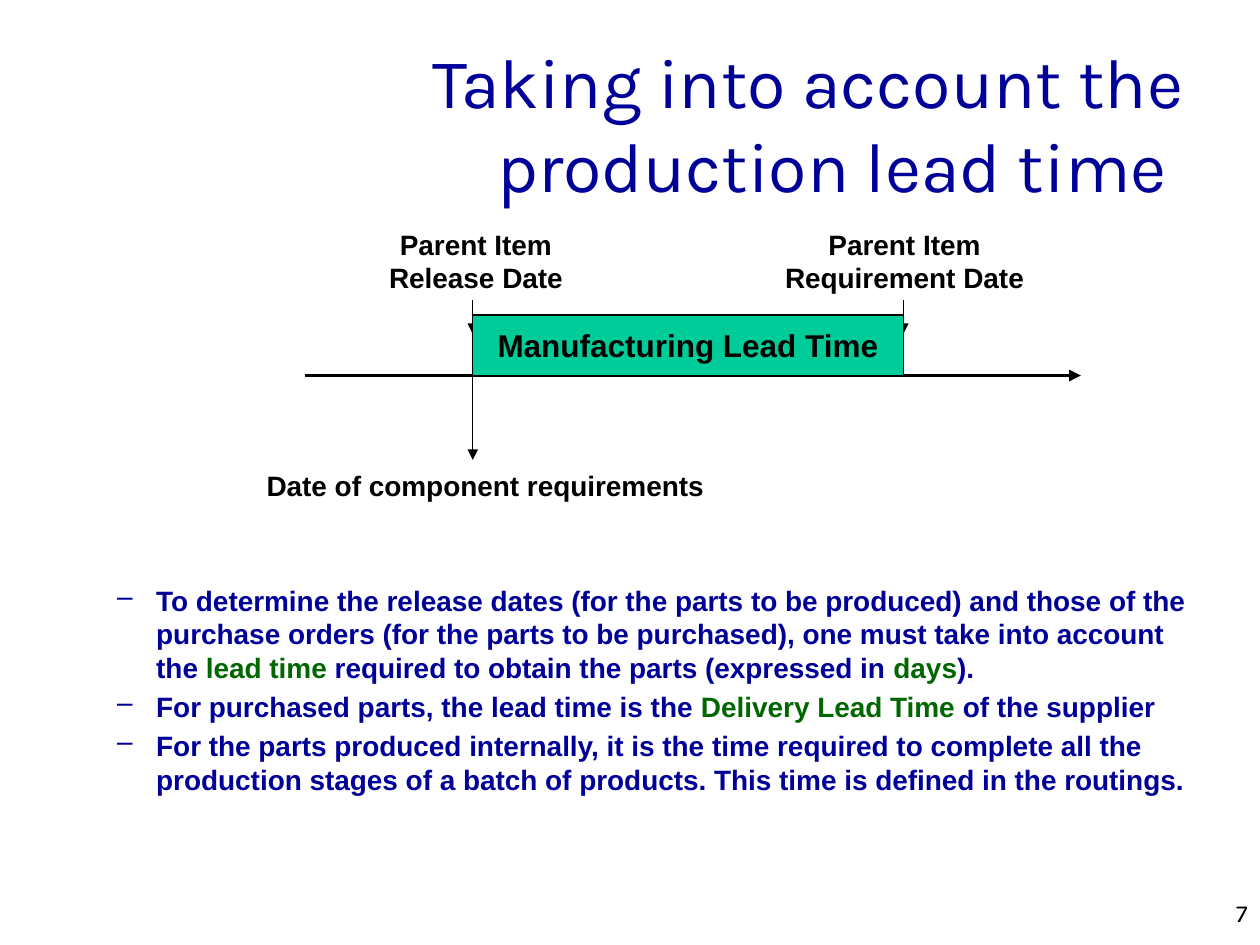
"""Builds a slide on taking the production lead time into account."""
from lxml import etree
from pptx import Presentation
from pptx.dml.color import RGBColor
from pptx.enum.shapes import MSO_CONNECTOR, MSO_SHAPE
from pptx.enum.text import MSO_ANCHOR, PP_ALIGN
from pptx.oxml.ns import qn
from pptx.util import Cm, Pt

STRAIGHT = MSO_CONNECTOR.STRAIGHT
RECTANGLE = MSO_SHAPE.RECTANGLE
TOP, MIDDLE = MSO_ANCHOR.TOP, MSO_ANCHOR.MIDDLE
LEFT, CENTER, RIGHT = PP_ALIGN.LEFT, PP_ALIGN.CENTER, PP_ALIGN.RIGHT
COLORS = {"black": "000000", "blue": "000099", "green": "006600", "teal": "00CC99"}

RELEASE_X, REQUIREMENT_X = 9.53, 18.21
AXIS_Y, BAR_TOP = 7.57, 6.35


def write_text(shape, paragraphs, size, font, align, anchor=TOP, wrap=True, bold=False):
    frame = shape.text_frame
    frame.word_wrap = wrap
    frame.vertical_anchor = anchor
    for index, runs in enumerate(paragraphs):
        paragraph = frame.add_paragraph() if index else frame.paragraphs[0]
        paragraph.alignment = align
        for text, color in runs:
            run = paragraph.add_run()
            run.text = text
            run.font.size = Pt(size)
            run.font.name = font
            run.font.bold = bold
            run.font.color.rgb = RGBColor.from_string(COLORS[color])


def add_arrow(slide, x1, y1, x2, y2, width):
    arrow = slide.shapes.add_connector(STRAIGHT, Cm(x1), Cm(y1), Cm(x2), Cm(y2))
    arrow.line.color.rgb = RGBColor.from_string(COLORS["black"])
    arrow.line.width = Pt(width)
    etree.SubElement(arrow.line._get_or_add_ln(), qn("a:tailEnd"), type="triangle")
    etree.SubElement(arrow._element.spPr, qn("a:effectLst"))


presentation = Presentation()
presentation.slide_width = Cm(25.4)
presentation.slide_height = Cm(19.05)
slide = presentation.slides.add_slide(presentation.slide_layouts[6])

page_number = slide.shapes.add_textbox(Cm(20.12), Cm(17.98), Cm(5.28), Cm(0.64))
write_text(page_number, [[("7", "black")]], 14, "Karla", RIGHT)

title = slide.shapes.add_textbox(Cm(3.81), Cm(1.32), Cm(20.29), Cm(2.29))
title_text = "Taking into account the production lead time "
write_text(title, [[(title_text, "blue")]], 40, "Karla", RIGHT, MIDDLE)

points = [
    [
        ("To determine the release dates (for the parts to be produced) and those of the "
         "purchase orders (for the parts to be purchased), one must take into account the ", "blue"),
        ("lead time", "green"),
        (" required to obtain the parts (expressed in ", "blue"),
        ("days", "green"),
        (").", "blue"),
    ],
    [
        ("For purchased parts, the lead time is the ", "blue"),
        ("Delivery Lead Time", "green"),
        (" of the supplier", "blue"),
    ],
    [
        ("For the parts produced internally, it is the time required to complete all the "
         "production stages of a batch of products. This time is defined in the routings.", "blue"),
    ],
]
body = slide.shapes.add_textbox(Cm(0.84), Cm(11.63), Cm(23.7), Cm(5.72))
write_text(body, points, 16, "Arial", LEFT, bold=True)
for paragraph in body.text_frame.paragraphs:
    paragraph.space_before = Pt(3.2)
    properties = paragraph._p.get_or_add_pPr()
    properties.set("marL", str(Cm(2.06)))
    properties.set("indent", str(-Cm(0.79)))
    etree.SubElement(properties, qn("a:buChar"), char="–")

add_arrow(slide, 6.15, AXIS_Y, 21.79, AXIS_Y, 2.25)
for x in (RELEASE_X, REQUIREMENT_X):
    add_arrow(slide, x, 6.05, x, 6.73, 0.75)

bar = slide.shapes.add_shape(
    RECTANGLE, Cm(RELEASE_X), Cm(BAR_TOP), Cm(REQUIREMENT_X - RELEASE_X), Cm(AXIS_Y - BAR_TOP)
)
bar.shadow.inherit = False
bar.fill.solid()
bar.fill.fore_color.rgb = RGBColor.from_string(COLORS["teal"])
bar.line.color.rgb = RGBColor.from_string(COLORS["black"])
bar.line.width = Pt(0.75)
write_text(bar, [[("Manufacturing Lead Time", "black")]], 18, "Arial", CENTER, MIDDLE, False, True)

add_arrow(slide, RELEASE_X, AXIS_Y, RELEASE_X, 9.27, 0.75)

labels = [
    (15.57, 4.44, 5.33, 1.63, ["Parent Item", "Requirement Date"]),
    (7.59, 4.44, 4.01, 1.63, ["Parent Item", "Release Date"]),
    (5.11, 9.32, 9.35, 0.94, ["Date of component requirements"]),
]
for left, top, width, height, lines in labels:
    label = slide.shapes.add_textbox(Cm(left), Cm(top), Cm(width), Cm(height))
    paragraphs = [[(line, "black")] for line in lines]
    write_text(label, paragraphs, 16, "Arial", CENTER, MIDDLE, False, True)

presentation.save("out.pptx")
